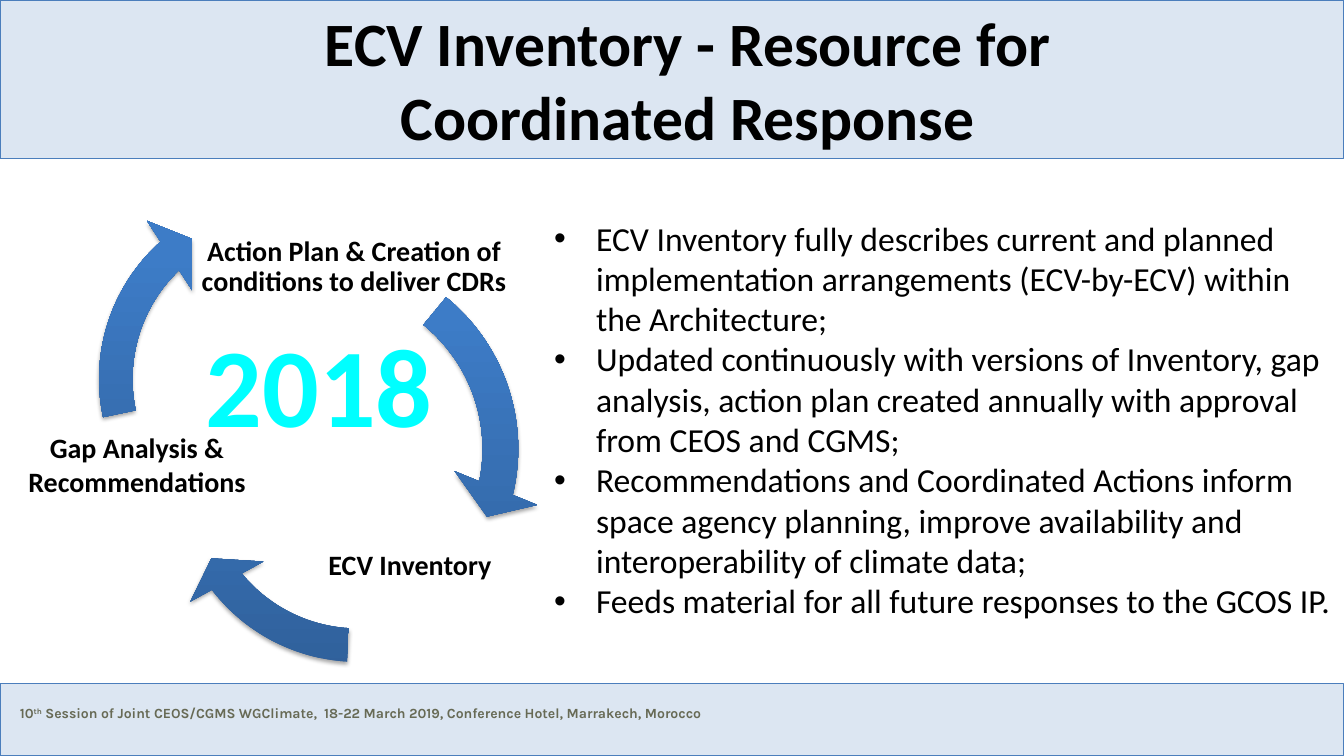
from dataclasses import dataclass
from typing import NamedTuple

from pptx import Presentation
from pptx.dml.color import RGBColor
from pptx.enum.shapes import MSO_SHAPE
from pptx.enum.text import MSO_ANCHOR, MSO_AUTO_SIZE, PP_ALIGN
from pptx.oxml import parse_xml
from pptx.oxml.ns import nsdecls
from pptx.oxml.xmlchemy import OxmlElement
from pptx.util import Pt

EMU_PER_PX = 914400 / 100.8


def px(length):
    return round(length * EMU_PER_PX)


class Box(NamedTuple):
    left: int
    top: int
    width: int
    height: int

    def inside(self, left, top, width, height):
        return Box(self.left + left, self.top + top, width, height)

    def emu(self):
        return [px(length) for length in self]


@dataclass(frozen=True)
class Theme:
    font: str = "Calibri"
    footer_font: str = "Karla"
    ink: str = "000000"
    footer_ink: str = "676A55"
    year_ink: str = "00FFFF"
    band: str = "DCE6F2"
    band_edge: str = "4B7EBC"
    arrow_stops: tuple = ((0, "2F5F99"), (80, "3D7CC7"), (100, "3A7CCB"))
    title_size: int = 44
    body_size: int = 24
    stage_size: int = 20
    year_size: int = 80
    footer_size: int = 10


THEME = Theme()

POINTS = (
    "ECV Inventory fully describes current and planned implementation "
    "arrangements (ECV-by-ECV) within the Architecture;",
    "Updated continuously with versions of Inventory, gap analysis, action plan "
    "created annually with approval from CEOS and CGMS;",
    "Recommendations and Coordinated Actions inform space agency planning, "
    "improve availability and interoperability of climate data;",
    "Feeds material for all future responses to the GCOS IP.",
)

STAGES = (
    ("Action Plan & Creation of conditions to deliver CDRs", (179, 39, 328, 117), 0.9,
     (86, 56, 448, 446), (0.08, 5.75, 7.56, 185.72, 0.1)),
    ("ECV Inventory", (276, 353, 246, 82), 1.0,
     (138, 99, 418, 418), (0.08, 5.75, 85.01, 56.05, 0.1)),
    ("Gap Analysis & Recommendations", (0, 243, 252, 103), 1.0,
     (63, 0, 418, 418), (0.08, 5.75, 136.44, 100.81, 0.1)),
)


def set_font(paragraph, size, color=THEME.ink, bold=True, name=THEME.font):
    font = paragraph.font
    font.name, font.size, font.bold = name, Pt(size), bold
    font.color.rgb = RGBColor.from_string(color)


def set_margins(frame, margin):
    frame.margin_left = frame.margin_right = px(margin)
    frame.margin_top = frame.margin_bottom = px(margin)


def place(placeholder, box):
    placeholder.left, placeholder.top, placeholder.width, placeholder.height = box.emu()
    frame = placeholder.text_frame
    frame.word_wrap = True
    frame.auto_size = MSO_AUTO_SIZE.NONE
    frame.vertical_anchor = MSO_ANCHOR.MIDDLE
    return frame


def add_band(shapes, box):
    band = shapes.add_shape(MSO_SHAPE.RECTANGLE, *box.emu())
    band.shadow.inherit = False
    band.fill.solid()
    band.fill.fore_color.rgb = RGBColor.from_string(THEME.band)
    band.line.color.rgb = RGBColor.from_string(THEME.band_edge)
    band.line.width = Pt(0.75)


def add_header(slide, box):
    add_band(slide.shapes, box)
    title = slide.shapes.title
    slide.shapes._spTree.append(title._element)
    frame = place(title, box.inside(213, 16, 950, 126))
    frame.text = "ECV Inventory - Resource for Coordinated Response"
    heading = frame.paragraphs[0]
    heading.alignment = PP_ALIGN.CENTER
    set_font(heading, THEME.title_size)


def add_footer(slide, box):
    add_band(slide.shapes, box)
    session = slide.shapes.add_textbox(*box.inside(10, 16, 1073, 27).emu()).text_frame
    session.word_wrap = True
    line = session.paragraphs[0]
    line.add_run().text = "10"
    ordinal = line.add_run()
    ordinal.text = "th"
    ordinal._r.get_or_add_rPr().set("baseline", "30000")
    line.add_run().text = (" Session of Joint CEOS/CGMS WGClimate,  18-22 March 2019, "
                           "Conference Hotel, Marrakech, Morocco")
    set_font(line, THEME.footer_size, THEME.footer_ink, name=THEME.footer_font)


def add_stage_label(shapes, box, text, spacing):
    frame = shapes.add_textbox(*box.emu()).text_frame
    frame.word_wrap = True
    frame.vertical_anchor = MSO_ANCHOR.MIDDLE
    set_margins(frame, 3)
    frame.text = text
    label = frame.paragraphs[0]
    label.alignment = PP_ALIGN.CENTER
    label.line_spacing = spacing
    set_font(label, THEME.stage_size)


def add_cycle_arrow(shapes, box, adjustments):
    arrow = shapes.add_shape(MSO_SHAPE.CIRCULAR_ARROW, *box.emu())
    for index, value in enumerate(adjustments):
        arrow.adjustments[index] = value
    stops = "".join(
        f'<a:gs pos="{position * 1000}"><a:srgbClr val="{color}"/></a:gs>'
        for position, color in THEME.arrow_stops)
    properties = arrow._element.spPr
    properties.append(parse_xml(
        f'<a:gradFill {nsdecls("a")}><a:gsLst>{stops}</a:gsLst>'
        '<a:lin ang="16200000" scaled="0"/></a:gradFill>'))
    arrow.line.fill.background()
    properties.append(parse_xml(
        f'<a:effectLst {nsdecls("a")}><a:outerShdw blurRad="{Pt(3.1)}" dist="{Pt(1.8)}" '
        'dir="5400000" rotWithShape="0"><a:srgbClr val="000000"><a:alpha val="35000"/>'
        '</a:srgbClr></a:outerShdw></a:effectLst>'))


def add_cycle(slide, box):
    cycle = slide.shapes.add_group_shape().shapes
    for text, label_area, spacing, arrow_area, adjustments in STAGES:
        add_stage_label(cycle, box.inside(*label_area), text, spacing)
        add_cycle_arrow(cycle, box.inside(*arrow_area), adjustments)
    frame = slide.shapes.add_textbox(*box.inside(185, 141, 249, 146).emu()).text_frame
    frame.word_wrap = False
    frame.text = "2018"
    set_font(frame.paragraphs[0], THEME.year_size, THEME.year_ink)


def add_points(slide, box):
    body = slide.placeholders[1]
    slide.shapes._spTree.append(body._element)
    frame = place(body, box)
    frame.text = "\n".join(POINTS)
    for point in frame.paragraphs:
        properties = point._p.get_or_add_pPr()
        properties.set("marL", str(px(42)))
        properties.set("indent", str(-px(42)))
        bullet = OxmlElement("a:buChar")
        bullet.set("char", "•")
        properties.append(bullet)
        point.space_before = Pt(0)
        set_font(point, THEME.body_size, bold=False)


def main():
    presentation = Presentation()
    presentation.slide_width, presentation.slide_height = px(1344), px(756)
    slide = presentation.slides.add_slide(presentation.slide_layouts[1])
    add_footer(slide, Box(0, 684, 1344, 72))
    add_header(slide, Box(0, 0, 1344, 159))
    add_cycle(slide, Box(11, 170, 556, 517))
    add_points(slide, Box(544, 156, 800, 526))
    presentation.save("out.pptx")


if __name__ == "__main__":
    main()
